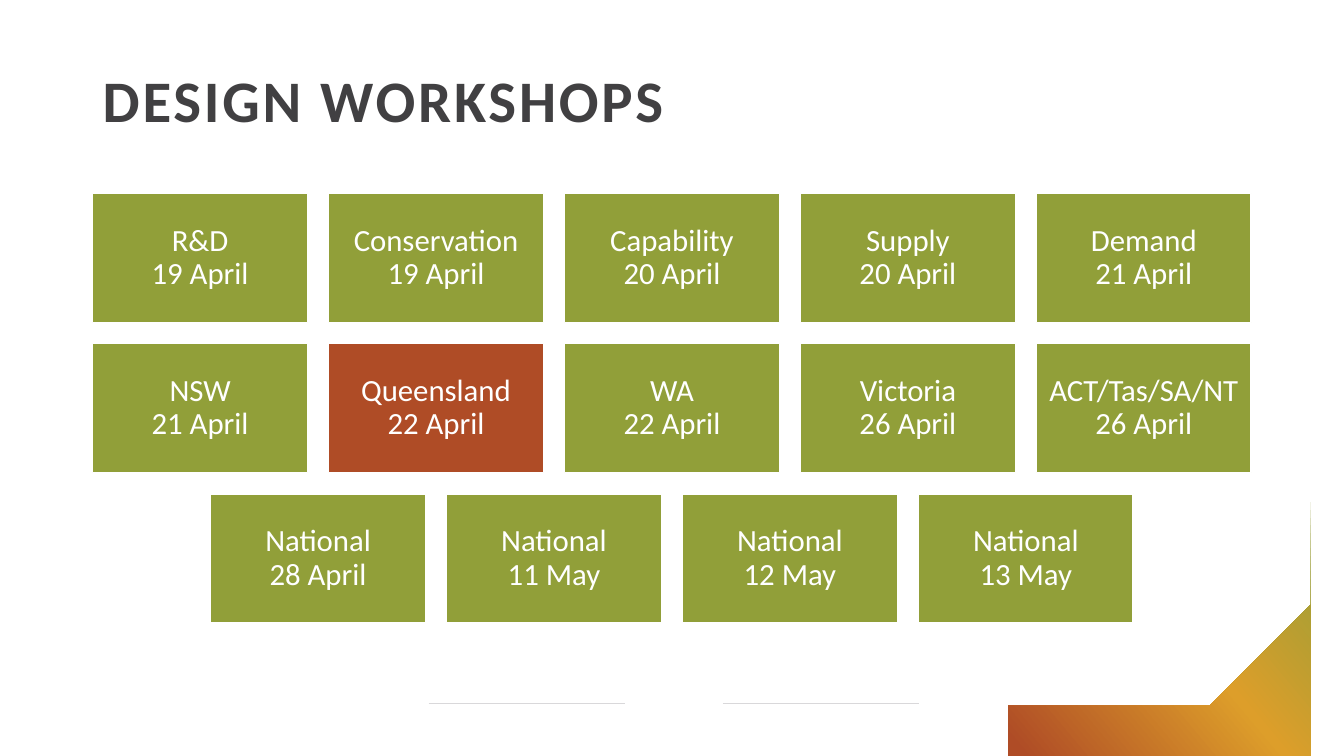
from copy import deepcopy
from math import cos, radians, sin

from lxml import etree
from pptx import Presentation, util as u
from pptx.dml.color import RGBColor
from pptx.enum import shapes, text
from pptx.oxml.ns import qn

theme = {
    "green": RGBColor.from_string("919F39"),
    "amber": RGBColor.from_string("DD9E2A"),
    "rust": RGBColor.from_string("AF4C26"),
    "rule": RGBColor.from_string("D9D8DA"),
    "ink": RGBColor.from_string("414042"),
    "white": RGBColor.from_string("FFFFFF"),
    "font": "Calibri",
    "heading": u.Pt(42),
    "workshop": u.Pt(22),
}
width, height = 13.33, 7.5
card_width, card_height, gap = 2.13, 1.28, 0.21
column, row = card_width + gap, card_height + gap
grid_top = 1.92

workshops = [
    [("R&D", "19 April"), ("Conservation", "19 April"), ("Capability", "20 April"),
     ("Supply", "20 April"), ("Demand", "21 April")],
    [("NSW", "21 April"), ("Queensland", "22 April"), ("WA", "22 April"),
     ("Victoria", "26 April"), ("ACT/Tas/SA/NT", "26 April")],
    [("National", "28 April"), ("National", "11 May"),
     ("National", "12 May"), ("National", "13 May")],
]
current = "Queensland"


def write(frame, words, line_format, run_format, frame_format):
    for key, value in frame_format.items():
        setattr(frame, key, value)
    line = frame.paragraphs[0]
    line.text = words
    for key, value in line_format.items():
        setattr(line, key, value)
    for run in line.runs:
        run.font.color.rgb = run_format["color"]
        for key in ("name", "size", "bold"):
            setattr(run.font, key, run_format[key])
    return line


deck = Presentation()
deck.slide_width, deck.slide_height = u.Inches(width), u.Inches(height)
slide = deck.slides.add_slide(deck.slide_layouts[6])

footer_y = u.Inches(height * 0.93)
for start in (4.25, 7.17):
    footer_rule = slide.shapes.add_connector(
        shapes.MSO_CONNECTOR.STRAIGHT,
        u.Inches(start), footer_y, u.Inches(start + 1.95), footer_y)
    footer_rule.line.color.rgb = theme["rule"]
    footer_rule.line.width = u.Pt(0.5)
    etree.SubElement(footer_rule._element.spPr, qn("a:effectLst"))

radius = 3.18
arc = [(width - radius + radius * cos(radians(angle)),
        height - radius + radius * sin(radians(angle))) for angle in range(0, 91, 2)]
outline = slide.shapes.build_freeform(width, height, scale=u.Inches(1))
outline.add_line_segments(arc, close=True)
corner = outline.convert_to_shape()
corner.shadow.inherit = False
corner.line.fill.background()
corner.fill.gradient()
corner.fill.gradient_angle = 220
stop_list = corner._element.spPr.find(".//" + qn("a:gsLst"))
stop_list.insert(1, deepcopy(stop_list[0]))
blend = [("green", 0.12), ("amber", 0.5), ("rust", 0.91)]
for stop, (color, position) in zip(corner.fill.gradient_stops, blend):
    stop.color.rgb = theme[color]
    stop.position = position

grid_left = (width - 5 * column + gap) / 2
heading = slide.shapes.add_textbox(
    u.Inches(grid_left), u.Inches(0.66), u.Inches(5 * column - gap), u.Inches(1.02))
heading_line = write(
    heading.text_frame, "DESIGN WORKSHOPS", {"line_spacing": 0.9},
    {"color": theme["ink"], "name": theme["font"], "size": theme["heading"], "bold": True},
    {"word_wrap": True, "vertical_anchor": text.MSO_ANCHOR.TOP})
heading_line.runs[0].font._element.set("spc", "200")

inset = u.Inches(0.09)
card_frame = {"word_wrap": True, "vertical_anchor": text.MSO_ANCHOR.MIDDLE,
              "margin_left": inset, "margin_right": inset,
              "margin_top": inset, "margin_bottom": inset}
card_line = {"alignment": text.PP_ALIGN.CENTER, "line_spacing": 0.9}
card_run = {"color": theme["white"], "name": theme["font"],
            "size": theme["workshop"], "bold": False}

for level, sessions in enumerate(workshops):
    row_left = (width - len(sessions) * column + gap) / 2
    for place, (topic, date) in enumerate(sessions):
        card = slide.shapes.add_shape(
            shapes.MSO_SHAPE.RECTANGLE,
            u.Inches(row_left + place * column), u.Inches(grid_top + level * row),
            u.Inches(card_width), u.Inches(card_height))
        card.shadow.inherit = False
        card.fill.solid()
        card.fill.fore_color.rgb = theme["rust" if topic == current else "green"]
        card.line.color.rgb = theme["white"]
        card.line.width = u.Pt(1)
        write(card.text_frame, f"{topic}\v{date}", card_line, card_run, card_frame)

deck.save("out.pptx")
